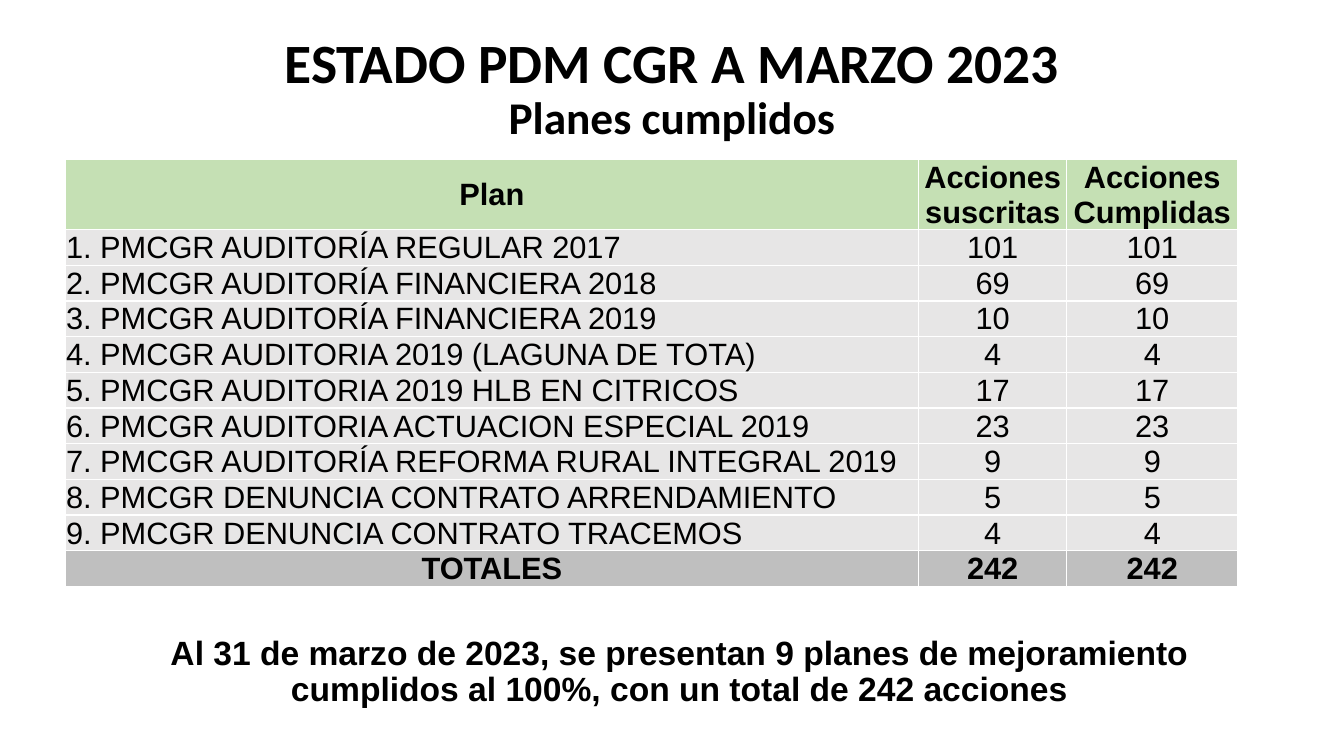
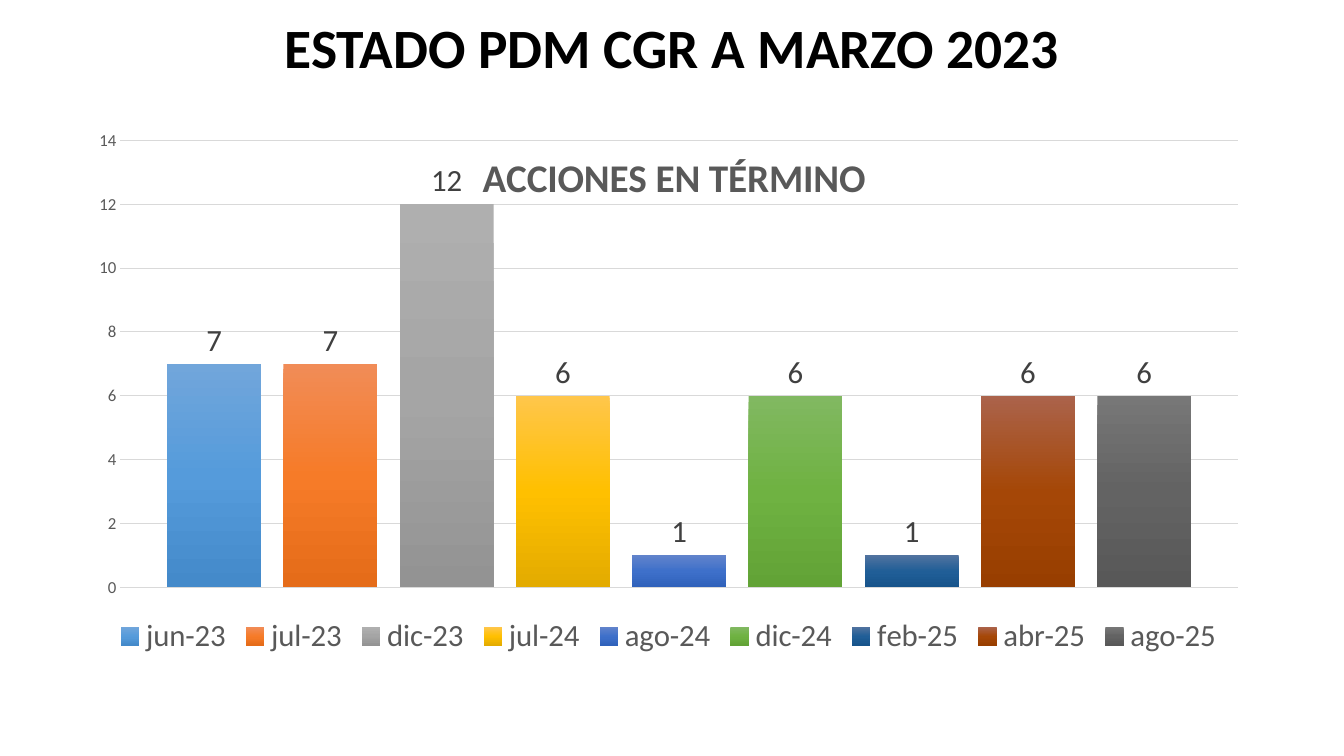
from copy import deepcopy
from dataclasses import dataclass

from pptx import Presentation
from pptx.chart.data import CategoryChartData
from pptx.dml.color import RGBColor
from pptx.enum.chart import XL_CHART_TYPE as ChartType
from pptx.enum.chart import XL_LABEL_POSITION as LabelPosition
from pptx.enum.chart import XL_LEGEND_POSITION as LegendPosition
from pptx.enum.chart import XL_TICK_MARK as TickMark
from pptx.enum.text import MSO_ANCHOR as Anchor
from pptx.enum.text import MSO_AUTO_SIZE as AutoSize
from pptx.enum.text import PP_ALIGN as Align
from pptx.oxml import parse_xml
from pptx.oxml.ns import nsdecls, qn
from pptx.util import Emu, Pt

BLACK = RGBColor(0x00, 0x00, 0x00)
WHITE = RGBColor(0xFF, 0xFF, 0xFF)
HEADER_GREEN = RGBColor(0xC5, 0xE0, 0xB4)
ROW_GRAY = RGBColor(0xE7, 0xE6, 0xE6)
TOTAL_GRAY = RGBColor(0xBF, 0xBF, 0xBF)
GRID_GRAY = RGBColor(0xD9, 0xD9, 0xD9)
AXIS_GRAY = RGBColor(0x59, 0x59, 0x59)
LABEL_GRAY = RGBColor(0x40, 0x40, 0x40)

HEADING = "ESTADO PDM CGR A MARZO 2023"
TITLE_LEFT, TITLE_WIDTH = 88, 1104
TITLE_SIZES = (39.6, 32.4)
COLUMN_WIDTHS = (813, 141, 163)
HEADER_HEIGHT, ROW_HEIGHT = 54, 34


@dataclass(frozen=True)
class Plan:
    name: str
    actions: int


@dataclass(frozen=True)
class Deadline:
    month: str
    actions: int
    gradient: tuple[RGBColor, RGBColor, RGBColor]


def shades(*codes: str) -> tuple[RGBColor, ...]:
    return tuple(RGBColor.from_string(code) for code in codes)


PLANS = [
    Plan("PMCGR AUDITORÍA REGULAR 2017", 101),
    Plan("PMCGR AUDITORÍA FINANCIERA 2018", 69),
    Plan("PMCGR AUDITORÍA FINANCIERA 2019", 10),
    Plan("PMCGR AUDITORIA 2019 (LAGUNA DE TOTA)", 4),
    Plan("PMCGR AUDITORIA 2019 HLB EN CITRICOS", 17),
    Plan("PMCGR AUDITORIA ACTUACION ESPECIAL 2019", 23),
    Plan("PMCGR AUDITORÍA REFORMA RURAL INTEGRAL 2019", 9),
    Plan("PMCGR DENUNCIA CONTRATO ARRENDAMIENTO", 5),
    Plan("PMCGR DENUNCIA CONTRATO TRACEMOS", 4),
]

DEADLINES = [
    Deadline("jun-23", 7, shades("71A6DB", "559BDB", "448ACA")),
    Deadline("jul-23", 7, shades("F18C57", "F67B28", "E56C19")),
    Deadline("dic-23", 12, shades("AFAFAF", "A5A5A5", "939393")),
    Deadline("jul-24", 6, shades("FFC64B", "FFC000", "E3AB00")),
    Deadline("ago-24", 1, shades("6183CB", "3E70CA", "3062BB")),
    Deadline("dic-24", 6, shades("81B861", "6FB242", "62A336")),
    Deadline("feb-25", 1, shades("51739F", "205E97", "17548B")),
    Deadline("abr-25", 6, shades("AB634B", "A54707", "983E00")),
    Deadline("ago-25", 6, shades("777777", "636363", "585858")),
]


def px(value: int) -> Emu:
    return Emu(value * 9525)


def assign(target, values: dict) -> None:
    for name, value in values.items():
        setattr(target, name, value)


def style_font(font, name: str, size: float, color: RGBColor, bold: bool = False) -> None:
    assign(font, {"name": name, "size": Pt(size), "bold": bold})
    font.color.rgb = color


def style_frame(frame) -> None:
    assign(frame, {"word_wrap": True, "auto_size": AutoSize.NONE, "vertical_anchor": Anchor.MIDDLE})
    assign(frame.paragraphs[0], {"alignment": Align.CENTER, "line_spacing": 0.9})


def add_titled_page(deck, top: int, height: int, lines: list[str]):
    page = deck.slides.add_slide(deck.slide_layouts[5])
    box = page.shapes.title
    assign(box, {"left": px(TITLE_LEFT), "top": px(top), "width": px(TITLE_WIDTH), "height": px(height)})
    style_frame(box.text_frame)
    para = box.text_frame.paragraphs[0]
    for index, (line, size) in enumerate(zip(lines, TITLE_SIZES)):
        if index:
            para.add_line_break()
            para._p.findall(qn("a:br"))[-1].append(deepcopy(span._r.rPr))
        span = para.add_run()
        span.text = line
        style_font(span.font, "Calibri", size, BLACK, True)
    return page


def add_note(page, left: int, top: int, width: int, height: int, text: str) -> None:
    box = page.shapes.add_textbox(px(left), px(top), px(width), px(height))
    style_frame(box.text_frame)
    span = box.text_frame.paragraphs[0].add_run()
    span.text = text
    style_font(span.font, "Arial", 24, BLACK, True)


def add_borders(cell) -> None:
    properties = cell._tc.get_or_add_tcPr()
    for side in ("lnL", "lnR", "lnT", "lnB"):
        properties.append(parse_xml(
            f'<a:{side} {nsdecls("a")} w="{Pt(1)}"><a:solidFill>'
            f'<a:srgbClr val="{WHITE}"/></a:solidFill></a:{side}>'
        ))


def fill_cell(cell, text: str, fill: RGBColor, bold: bool, align: Align) -> None:
    add_borders(cell)
    cell.fill.solid()
    cell.fill.fore_color.rgb = fill
    assign(cell, {
        "margin_left": px(1), "margin_right": px(1), "margin_top": px(1),
        "margin_bottom": px(0), "vertical_anchor": Anchor.MIDDLE,
    })
    para = cell.text_frame.paragraphs[0]
    para.alignment = align
    span = para.add_run()
    span.text = text
    style_font(span.font, "Arial", 22, BLACK, bold)


def add_plan_table(page, left: int, top: int, plans: list[Plan]) -> None:
    total = str(sum(plan.actions for plan in plans))
    rows = [("Plan", "Acciones suscritas", "Acciones Cumplidas")]
    rows += [(f"{number}. {plan.name}", str(plan.actions), str(plan.actions))
             for number, plan in enumerate(plans, 1)]
    rows.append(("TOTALES", total, total))
    fills = [HEADER_GREEN] + [ROW_GRAY] * len(plans) + [TOTAL_GRAY]
    heights = [HEADER_HEIGHT] + [ROW_HEIGHT] * (len(rows) - 1)
    table = page.shapes.add_table(
        len(rows), len(COLUMN_WIDTHS), px(left), px(top),
        px(sum(COLUMN_WIDTHS)), px(sum(heights)),
    ).table
    assign(table, {"first_row": False, "horz_banding": False})
    for column, width in zip(table.columns, COLUMN_WIDTHS):
        column.width = px(width)
    for index, (texts, fill, height) in enumerate(zip(rows, fills, heights)):
        table.rows[index].height = px(height)
        bold = fill != ROW_GRAY
        for column, text in enumerate(texts):
            align = Align.CENTER if bold or column else Align.LEFT
            fill_cell(table.cell(index, column), text, fill, bold, align)


def set_layout(parent, position: int, places: dict[str, float], inner: bool = False) -> None:
    previous = parent.find(qn("c:layout"))
    if previous is not None:
        parent.remove(previous)
    target = '<c:layoutTarget val="inner"/>' if inner else ""
    modes = "".join(f'<c:{key}Mode val="edge"/>' for key in ("x", "y"))
    values = "".join(f'<c:{key} val="{value}"/>' for key, value in places.items())
    parent.insert(position, parse_xml(
        f'<c:layout {nsdecls("c")}><c:manualLayout>{target}{modes}{values}</c:manualLayout></c:layout>'
    ))


def style_series(series, gradient: tuple[RGBColor, ...]) -> None:
    stops = "".join(
        f'<a:gs pos="{index * 50000}"><a:srgbClr val="{color}"/></a:gs>'
        for index, color in enumerate(gradient)
    )
    series._element.get_or_add_spPr().append(parse_xml(
        f'<a:gradFill {nsdecls("a")} rotWithShape="1"><a:gsLst>{stops}</a:gsLst>'
        '<a:lin ang="5400000" scaled="0"/></a:gradFill>'
    ))
    assign(series.data_labels, {"show_value": True, "position": LabelPosition.OUTSIDE_END})
    style_font(series.data_labels.font, "Calibri", 22, LABEL_GRAY)


def add_chart_title(chart, text: str) -> None:
    frame = chart.chart_title.text_frame
    span = frame.paragraphs[0].add_run()
    span.text = text
    style_font(span.font, "Calibri", 28, AXIS_GRAY, True)
    title = chart.chart_title._element
    set_layout(title, 1, {"x": 0.34, "y": 0.05})
    title.find(qn("c:overlay")).set("val", "1")


def add_deadline_chart(page, left: int, top: int, width: int, height: int,
                       deadlines: list[Deadline]) -> None:
    data = CategoryChartData()
    data.categories = ["1"]
    for deadline in deadlines:
        data.add_series(deadline.month, [deadline.actions])
    chart = page.shapes.add_chart(
        ChartType.COLUMN_CLUSTERED, px(left), px(top), px(width), px(height), data
    ).chart
    style_font(chart.font, "Calibri", 10, BLACK)
    add_chart_title(chart, "ACCIONES EN TÉRMINO")
    plot = chart.plots[0]
    assign(plot, {"gap_width": 100, "overlap": -24, "vary_by_categories": False})
    for series, deadline in zip(plot.series, deadlines):
        style_series(series, deadline.gradient)
    chart.category_axis.visible = False
    axis = chart.value_axis
    assign(axis, {
        "minimum_scale": 0, "maximum_scale": 14, "major_unit": 2,
        "major_tick_mark": TickMark.NONE, "minor_tick_mark": TickMark.NONE,
    })
    style_font(axis.tick_labels.font, "Calibri", 12, AXIS_GRAY)
    axis.format.line.fill.background()
    grid = axis.major_gridlines.format.line
    grid.width = Pt(0.75)
    grid.color.rgb = GRID_GRAY
    chart.has_legend = True
    assign(chart.legend, {"position": LegendPosition.BOTTOM, "include_in_layout": False})
    style_font(chart.legend.font, "Calibri", 22, AXIS_GRAY)
    area = chart._chartSpace.chart.plotArea
    set_layout(area, 0, {"x": 0.045, "y": 0.044, "w": 0.928, "h": 0.82}, True)


def main() -> None:
    deck = Presentation()
    assign(deck, {"slide_width": px(1280), "slide_height": px(720)})

    page = add_titled_page(deck, 38, 96, [HEADING, "Planes cumplidos"])
    add_note(page, 125, 599, 1044, 83,
             "Al 31 de marzo de 2023, se presentan 9 planes de mejoramiento "
             "cumplidos al 100%, con un total de 242 acciones")
    add_plan_table(page, 62, 152, PLANS)

    page = add_titled_page(deck, 13, 70, [HEADING])
    add_deadline_chart(page, 63, 111, 1147, 519, DEADLINES)

    deck.save("out.pptx")


if __name__ == "__main__":
    main()
